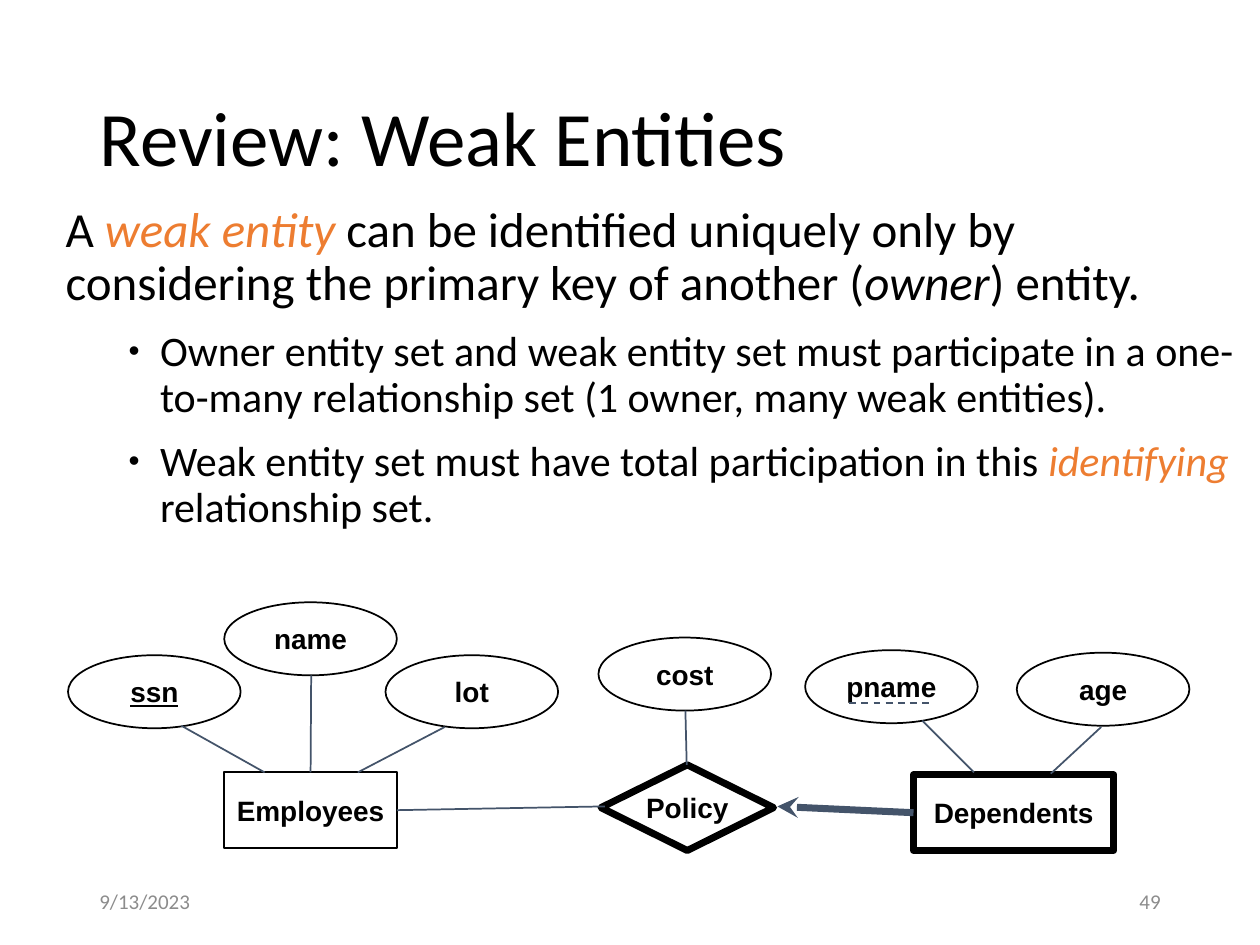
from lxml.etree import SubElement
from pptx import Presentation
from pptx.dml.color import RGBColor
from pptx.enum.dml import MSO_LINE
from pptx.enum.shapes import MSO_CONNECTOR, MSO_SHAPE
from pptx.enum.text import MSO_ANCHOR, MSO_AUTO_SIZE, PP_ALIGN
from pptx.oxml.ns import qn
from pptx.util import Inches, Pt

BLACK, ORANGE, SLATE, GRAY = "000000", "ED7D31", "44546A", "8C8C8C"
COLS, ROWS = 100, 75  # grid over the slide
deck = Presentation()
deck.slide_width, deck.slide_height = Inches(10), Inches(7.5)


def grid(x, y):
    return int(deck.slide_width * x / COLS), int(deck.slide_height * y / ROWS)


def color(code):
    return RGBColor.from_string(code)


def style(run, size, code=BLACK, name="Calibri"):
    run.font.size, run.font.name = Pt(size), name
    run.font.color.rgb = color(code)


def place(shape, box):
    shape.left, shape.top = grid(*box[:2])
    shape.width, shape.height = grid(*box[2:])


def title(slide, box):
    head = slide.shapes.title
    place(head, box)
    frame = head.text_frame
    frame.text = "Review: Weak Entities"
    frame.vertical_anchor = MSO_ANCHOR.MIDDLE
    para = frame.paragraphs[0]
    para.alignment, para.line_spacing = PP_ALIGN.LEFT, 0.9
    style(para.runs[0], 44)


def body(slide, box):
    # Each paragraph: level, size, space before, space after, (text, look) runs
    paras = [
        (0, 28, 10, 6, [("A ", ""), ("weak entity ", "key"),
                        ("can be identified uniquely only by considering "
                         "the primary key of another (", ""),
                        ("owner", "italic"), (") entity.", "")]),
        (1, 24, 5, 6, [("Owner entity set and weak entity set must participate "
                        "in a one-to-many relationship set (1 owner, many weak "
                        "entities).", "")]),
        (1, 24, 5, 0, [("Weak entity set must have total participation in "
                        "this ", ""), ("identifying ", "key"),
                       ("relationship set.", "")]),
    ]
    holder = slide.placeholders[1]
    place(holder, box)
    frame = holder.text_frame
    frame.auto_size = MSO_AUTO_SIZE.NONE
    for i, (level, size, before, after, parts) in enumerate(paras):
        para = frame.add_paragraph() if i else frame.paragraphs[0]
        para.level, para.line_spacing = level, 0.9
        para.space_before, para.space_after = Pt(before), Pt(after)
        for text, look in parts:
            run = para.add_run()
            run.text = text
            style(run, size, ORANGE if look == "key" else BLACK)
            run.font.italic = bool(look)
        bullet(para, level)


def bullet(para, level):
    props = para._p.get_or_add_pPr()
    props.set("marL", str(Inches(0.75 * level)))
    props.set("indent", str(Inches(-0.25 * level)))
    if level:
        SubElement(props, qn("a:buSzPct"), val="75000")
        SubElement(props, qn("a:buFont"), typeface="Arial")
        SubElement(props, qn("a:buChar"), char="•")
    else:
        SubElement(props, qn("a:buNone"))


def node(slide, kind, text, box, weight=1):
    shape = slide.shapes.add_shape(kind, *grid(*box[:2]), *grid(*box[2:]))
    shape.shadow.inherit = False
    shape.fill.background()
    shape.line.color.rgb, shape.line.width = color(BLACK), Pt(weight)
    frame = shape.text_frame
    frame.text, frame.word_wrap = text, False
    frame.margin_left = frame.margin_right = 0
    frame.vertical_anchor = MSO_ANCHOR.MIDDLE
    frame.paragraphs[0].alignment = PP_ALIGN.CENTER
    run = frame.paragraphs[0].runs[0]
    style(run, 16, BLACK, "Arial")
    run.font.bold, run.font.underline = True, text == "ssn"
    return shape


def link(slide, start, end, weight=1):
    line = slide.shapes.add_connector(
        MSO_CONNECTOR.STRAIGHT, *grid(*start), *grid(*end))
    line.line.color.rgb, line.line.width = color(SLATE), Pt(weight)
    SubElement(line._element.spPr, qn("a:effectLst"))
    return line


def diagram(slide, left, top):
    def at(x, y):
        return left + x, top + y

    # Attributes
    ovals = [("ssn", 0, 4.2), ("name", 12.4, 0), ("lot", 25.2, 4.2),
             ("cost", 42.1, 2.8), ("pname", 58.5, 3.8), ("age", 75.3, 4)]
    for text, x, y in ovals:
        node(slide, MSO_SHAPE.OVAL, text, (*at(x, y), 13.7, 5.8))

    # Entities and their relationship
    owner = node(slide, MSO_SHAPE.RECTANGLE, "Employees",
                 (*at(12.4, 13.5), 13.7, 6))
    node(slide, MSO_SHAPE.DIAMOND, "Policy", (*at(42.3, 12.9), 13.7, 6.8), 4)
    weak = node(slide, MSO_SHAPE.RECTANGLE, "Dependents",
                (*at(67.1, 13.7), 15.9, 6), 4)

    # Attribute lines
    ties = [((9, 9.8), (15.6, 13.5)), ((29.9, 9.9), (23, 13.5)),
            ((49, 8.6), (49.1, 12.9)), ((67.8, 9.4), (71.9, 13.5)),
            ((82, 9.9), (78, 13.6))]
    for start, end in ties:
        link(slide, at(*start), at(*end))
    link(slide, at(19.3, 5.8), at(19.3, 13.5)).end_connect(owner, 0)

    # Partial key mark
    dash = link(slide, at(62, 8), at(68.7, 8))
    dash.line.dash_style = MSO_LINE.DASH

    # Relationship lines
    link(slide, at(26.1, 16.5), at(42.6, 16.2)).begin_connect(owner, 3)
    arrow = link(slide, at(67.1, 16.7), at(56.3, 16.2), 4)
    arrow.begin_connect(weak, 1)
    SubElement(arrow.line._get_or_add_ln(), qn("a:tailEnd"), type="stealth")


def footer(slide, text, box, align):
    label = slide.shapes.add_textbox(*grid(*box[:2]), *grid(*box[2:]))
    frame = label.text_frame
    frame.text, frame.word_wrap = text, True
    frame.vertical_anchor = MSO_ANCHOR.MIDDLE
    frame.paragraphs[0].alignment = align
    style(frame.paragraphs[0].runs[0], 12, GRAY)


def main():
    slide = deck.slides.add_slide(deck.slide_layouts[1])
    title(slide, (6.9, 4, 86.2, 14.5))
    body(slide, (4.2, 15.8, 95, 30.8))
    diagram(slide, 5.4, 47.8)
    footer(slide, "9/13/2023", (6.9, 69.5, 22.5, 4), PP_ALIGN.LEFT)
    footer(slide, "49", (70.6, 69.5, 22.5, 4), PP_ALIGN.RIGHT)
    deck.save("out.pptx")


if __name__ == "__main__":
    main()
